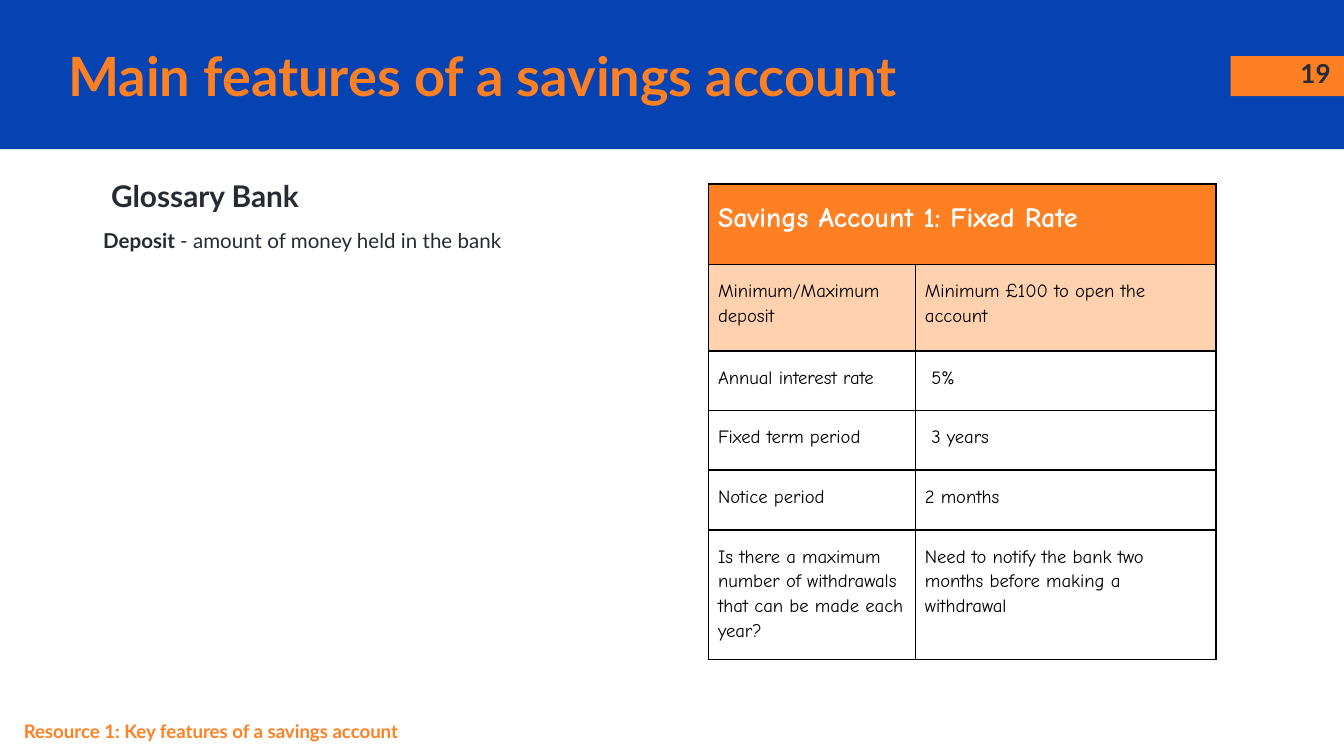
from lxml.etree import SubElement
from pptx import Presentation
from pptx.dml.color import RGBColor
from pptx.enum.shapes import MSO_SHAPE
from pptx.enum.text import MSO_ANCHOR, PP_ALIGN
from pptx.oxml.ns import qn
from pptx.util import Cm, Pt

BLUE = RGBColor(0x05, 0x43, 0xB3)
ORANGE = RGBColor(0xFF, 0x80, 0x22)
PEACH = RGBColor(0xFF, 0xD1, 0xAF)
INK = RGBColor(0x26, 0x2A, 0x33)
BLACK = RGBColor(0, 0, 0)
WHITE = RGBColor(0xFF, 0xFF, 0xFF)
PAD = 0.25


def write(frame, text, size=10, color=INK, font="Lato", bold=True,
          align=PP_ALIGN.LEFT, anchor=MSO_ANCHOR.TOP, space=1.0, left=PAD):
    """Fill a text box or table cell; text after a "|" is set in regular weight."""
    frame.margin_left = Cm(left)
    frame.margin_top = frame.margin_bottom = Cm(PAD)
    frame.vertical_anchor = anchor
    body = getattr(frame, "text_frame", frame)
    body.word_wrap = True
    para = body.paragraphs[0]
    para.alignment = align
    para.line_spacing = space
    for i, part in enumerate(text.split("|")):
        run = para.add_run()
        run.text = part
        run.font.name = font
        run.font.size = Pt(size)
        run.font.bold = bold and i == 0
        run.font.color.rgb = color


def edge(cell):
    """Draw a thin black line on all four sides of a cell."""
    props = cell._tc.get_or_add_tcPr()
    for side in ("lnL", "lnR", "lnT", "lnB"):
        line = SubElement(props, qn(f"a:{side}"), w=str(Pt(1)))
        fill = SubElement(line, qn("a:solidFill"))
        SubElement(fill, qn("a:srgbClr"), val=str(BLACK))


deck = Presentation()
deck.slide_width, deck.slide_height = Cm(25.4), Cm(14.29)
slide = deck.slides.add_slide(deck.slide_layouts[6])
shapes = slide.shapes

# Title band and page number tab
for box, color in [((0, 0, 25.4, 2.82), BLUE), ((23.26, 1.06, 2.14, 0.76), ORANGE)]:
    band = shapes.add_shape(MSO_SHAPE.RECTANGLE, *map(Cm, box))
    band.shadow.inherit = False
    band.fill.solid()
    band.fill.fore_color.rgb = color
    band.line.fill.background()

# Text boxes: place, text, format
texts = [
    ((23.88, 0.84, 1.52, 1.09), "19", dict(size=14, align=PP_ALIGN.RIGHT)),
    ((1.04, 0.71, 21.49, 1.42), "Main features of a savings account",
     dict(size=29, color=ORANGE, anchor=MSO_ANCHOR.MIDDLE)),
    ((1.57, 3, 6.48, 1.2), "Glossary Bank", dict(size=16, space=1.15, left=0.53)),
    ((1.42, 3.99, 11.94, 1.04), "Deposit |- amount of money held in the bank",
     dict(size=11, space=1.15, left=0.53)),
    ((0.2, 13.39, 13.06, 0.9), "Resource 1: Key features of a savings account",
     dict(color=ORANGE)),
]
for box, text, style in texts:
    write(shapes.add_textbox(*map(Cm, box)).text_frame, text, **style)

# Account table: height, fill, left margin of the value, texts
rows = [
    (1.52, ORANGE, 0.18, ("Savings Account 1: Fixed Rate", "")),
    (1.63, PEACH, 0.18, ("Minimum/Maximum deposit", "Minimum £100 to open the account")),
    (1.13, WHITE, 0.3, ("Annual interest rate", "5%")),
    (1.13, WHITE, 0.3, ("Fixed term period", "3 years")),
    (1.13, WHITE, 0.18, ("Notice period", "2 months")),
    (2.44, WHITE, 0.18,
     ("Is there a maximum number of withdrawals that can be made each year?",
      "Need to notify the bank two months before making a withdrawal")),
]
widths = (3.91, 5.68)
high = sum(row[0] for row in rows)
table = shapes.add_table(len(rows), len(widths), Cm(13.39), Cm(3.48),
                         Cm(sum(widths)), Cm(high)).table
table.first_row = table.horz_banding = False
for col, width in zip(table.columns, widths):
    col.width = Cm(width)
table.cell(0, 0).merge(table.cell(0, 1))

for r, (height, color, inset, pair) in enumerate(rows):
    table.rows[r].height = Cm(height)
    head = r == 0
    for c, text in enumerate(pair):
        cell = table.cell(r, c)
        edge(cell)
        cell.fill.solid()
        cell.fill.fore_color.rgb = color
        cell.margin_right = Cm(0.18)
        if text:
            write(cell, text, size=15 if head else 10, font="Comic Neue", bold=head,
                  color=WHITE if head else BLACK, space=1.15,
                  left=inset if c else 0.18)

deck.save("out.pptx")
